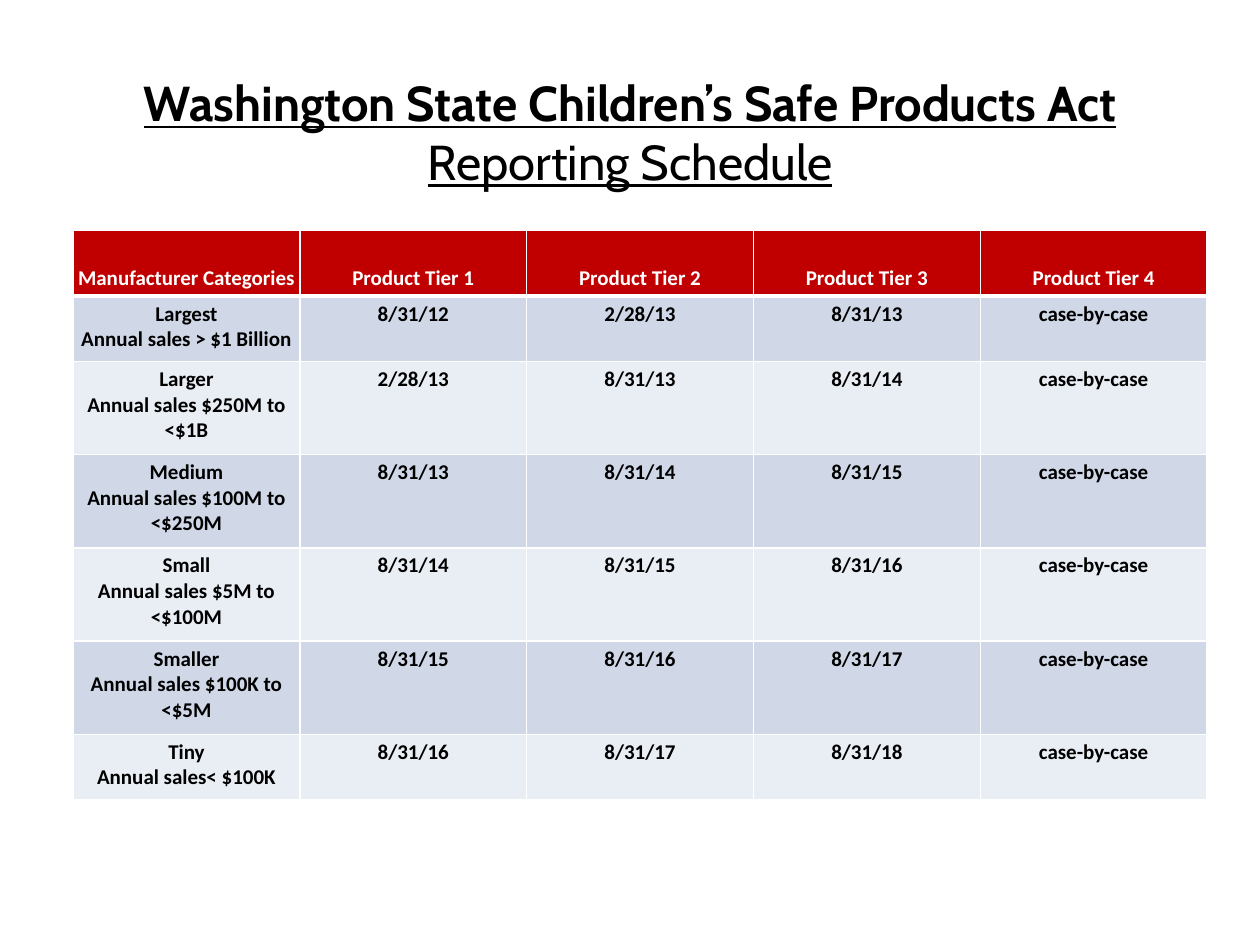
from lxml.etree import SubElement
from pptx import Presentation
from pptx.dml.color import RGBColor
from pptx.enum.text import MSO_ANCHOR as Anchor, PP_ALIGN as Align
from pptx.oxml.ns import qn
from pptx.util import Inches, Pt

COLORS = {
    "text": "000000",
    "header": "C00000",
    "header_text": "FFFFFF",
    "border": "FFFFFF",
    "odd_row": "D0D8E8",
    "even_row": "E9EDF4",
}
TIERS = 4
CELL_INSET = Inches(0.04)
ROW_HEIGHTS = {2: 0.52, 3: 0.74}  # inches, by number of text lines

# Category, sales range and number of text lines in its row
MANUFACTURERS = [
    ("Largest", "Annual sales > $1 Billion", 2),
    ("Larger", "Annual sales $250M to <$1B", 3),
    ("Medium", "Annual sales $100M to <$250M", 3),
    ("Small", "Annual sales $5M to <$100M", 3),
    ("Smaller", "Annual sales $100K to <$5M", 3),
    ("Tiny", "Annual sales< $100K", 2),
]
# Each category starts one deadline later than the one above it
DEADLINES = ["8/31/12", "2/28/13"] + [f"8/31/{year}" for year in range(13, 19)]


def color(name):
    return RGBColor.from_string(COLORS[name])


def style_paragraph(paragraph, face, size, color_name):
    paragraph.alignment = Align.CENTER
    font = paragraph.font
    font.name, font.size, font.bold = face, Pt(size), True
    font.color.rgb = color(color_name)


def add_title(slide, left, top, width, height):
    title = slide.shapes.title
    title.left, title.top, title.width, title.height = left, top, width, height
    frame = title.text_frame
    frame.vertical_anchor = Anchor.MIDDLE
    heading = frame.paragraphs[0]
    style_paragraph(heading, "Cabin", 28, "text")
    heading.font.underline = True
    heading.add_run().text = "Washington State Children’s Safe Products Act"
    heading.add_line_break()
    subtitle = heading.add_run()
    subtitle.text = "Reporting Schedule"
    subtitle.font.bold = False


def add_borders(cell, bottom):
    """Outline a cell at 1 pt, with its own bottom width in points."""
    properties = cell._tc.get_or_add_tcPr()
    for side, width in (("L", 1), ("R", 1), ("T", 1), ("B", bottom)):
        line = SubElement(properties, qn(f"a:ln{side}"), w=str(Pt(width)))
        fill = SubElement(line, qn("a:solidFill"))
        SubElement(fill, qn("a:srgbClr"), val=COLORS["border"])


def fill_cell(cell, text, fill, text_color, anchor, bottom):
    cell.margin_left = cell.margin_right = CELL_INSET
    cell.margin_top = cell.margin_bottom = CELL_INSET
    cell.vertical_anchor = anchor
    add_borders(cell, bottom)
    cell.fill.solid()
    cell.fill.fore_color.rgb = color(fill)
    cell.text_frame.text = text
    for paragraph in cell.text_frame.paragraphs:
        style_paragraph(paragraph, "Calibri", 12, text_color)


def schedule_rows():
    header = ["Manufacturer Categories"]
    yield header + [f"Product Tier {tier + 1}" for tier in range(TIERS)]
    for start, (category, sales, _) in enumerate(MANUFACTURERS):
        dates = DEADLINES[start:start + TIERS - 1]
        yield [f"{category}\n{sales}", *dates, "case-by-case"]


def add_schedule(slide, left, top, width):
    heights = [Inches(ROW_HEIGHTS[lines])
               for lines in [2] + [entry[2] for entry in MANUFACTURERS]]
    table = slide.shapes.add_table(
        len(heights), TIERS + 1, left, top, width, sum(heights)).table
    for column in table.columns:
        column.width = width // (TIERS + 1)
    for index, texts in enumerate(schedule_rows()):
        table.rows[index].height = heights[index]
        if index == 0:
            look = ("header", "header_text", Anchor.BOTTOM, 3)
        else:
            band = "odd_row" if index % 2 else "even_row"
            look = (band, "text", Anchor.TOP, 1)
        for cell, text in zip(table.rows[index].cells, texts):
            fill_cell(cell, text, *look)


def main():
    deck = Presentation()
    deck.slide_width, deck.slide_height = Inches(10), Inches(7.5)
    slide = deck.slides.add_slide(deck.slide_layouts[5])
    content_width = Inches(9)
    add_title(slide, Inches(0.5), Inches(0.42), content_width, Inches(1.25))
    add_schedule(slide, Inches(0.58), Inches(1.83), content_width)
    deck.save("out.pptx")


if __name__ == "__main__":
    main()
